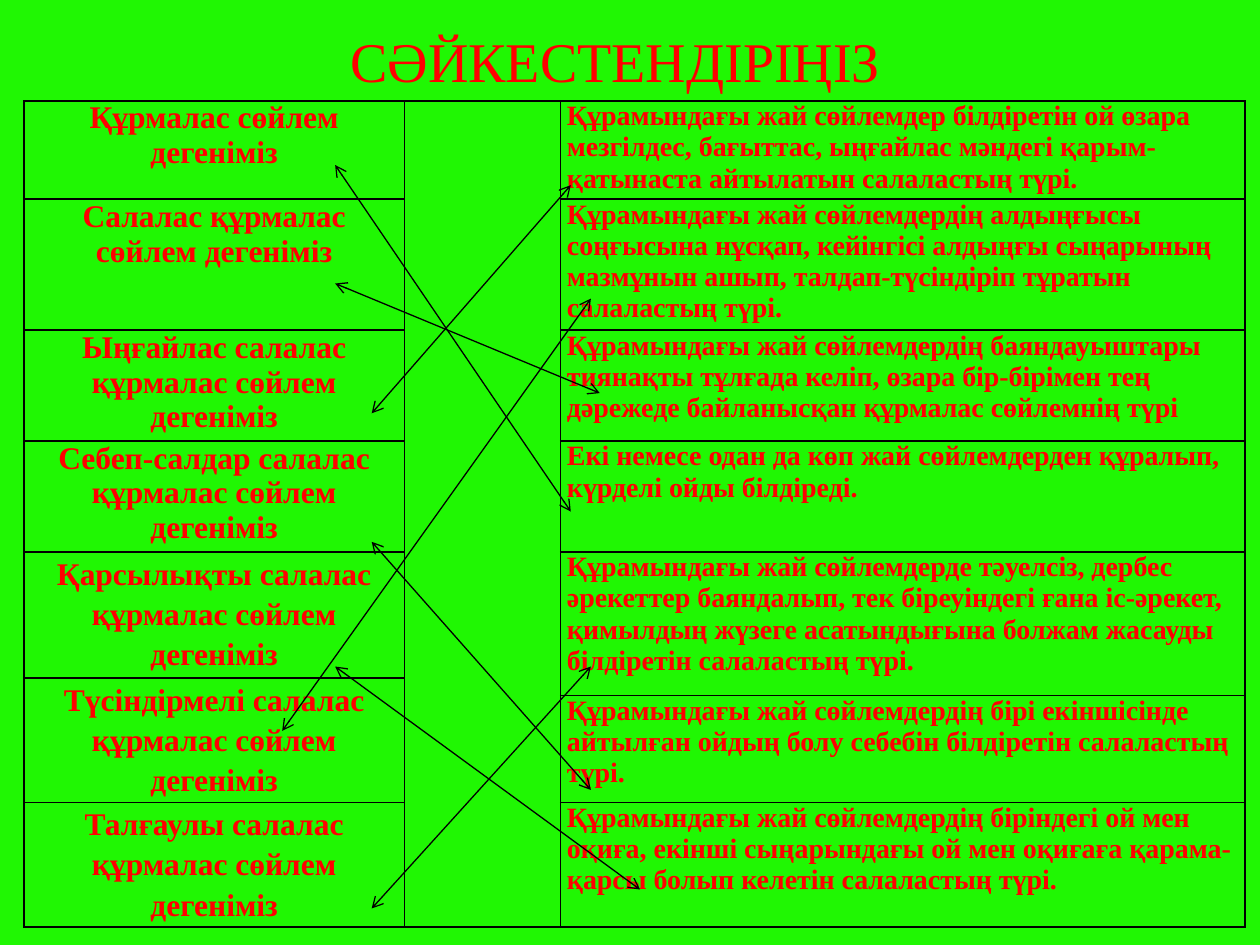
from dataclasses import dataclass

from lxml.etree import SubElement
from pptx import Presentation
from pptx.dml.color import RGBColor
from pptx.enum.shapes import MSO_CONNECTOR
from pptx.enum.text import MSO_ANCHOR, MSO_AUTO_SIZE, PP_ALIGN
from pptx.oxml import parse_xml
from pptx.oxml.ns import qn
from pptx.util import Inches, Pt


@dataclass(frozen=True)
class Theme:
    background: str = "20F703"
    ink: str = "FF0000"
    rule: str = "000000"
    font: str = "Times New Roman"
    title_size: int = 32
    term_size: int = 18
    definition_size: int = 16
    border_width: float = 1
    arrow_width: float = 0.75


THEME = Theme()
TITLE = "СӘЙКЕСТЕНДІРІҢІЗ"

# (first row, last row, line spacing, text)
TERMS = [
    (0, 0, None, "Құрмалас сөйлем дегеніміз"),
    (1, 1, None, "Салалас құрмалас сөйлем дегеніміз"),
    (2, 2, None, "Ыңғайлас салалас құрмалас сөйлем дегеніміз"),
    (3, 3, None, "Себеп-салдар салалас құрмалас сөйлем дегеніміз"),
    (4, 4, 1.15, "Қарсылықты салалас құрмалас сөйлем дегеніміз"),
    (5, 6, 1.15, "Түсіндірмелі салалас құрмалас сөйлем дегеніміз"),
    (7, 7, 1.15, "Талғаулы салалас құрмалас сөйлем дегеніміз"),
]
DEFINITIONS = [
    (0, 0, None, "Құрамындағы жай сөйлемдер білдіретін ой өзара мезгілдес, бағыттас, ыңғайлас мәндегі қарым-қатынаста айтылатын салаластың түрі."),
    (1, 1, None, "Құрамындағы жай сөйлемдердің алдыңғысы соңғысына нұсқап, кейінгісі алдыңғы сыңарының мазмұнын ашып, талдап-түсіндіріп тұратын салаластың түрі."),
    (2, 2, None, "Құрамындағы жай сөйлемдердің баяндауыштары тиянақты тұлғада келіп, өзара бір-бірімен тең дәрежеде байланысқан құрмалас сөйлемнің түрі"),
    (3, 3, None, "Екі немесе одан да көп жай сөйлемдерден құралып, күрделі ойды білдіреді."),
    (4, 5, None, "Құрамындағы жай сөйлемдерде тәуелсіз, дербес әрекеттер баяндалып, тек біреуіндегі ғана іс-әрекет, қимылдың жүзеге асатындығына болжам жасауды білдіретін салаластың түрі."),
    (6, 6, None, "Құрамындағы жай сөйлемдердің бірі екіншісінде айтылған ойдың болу себебін білдіретін салаластың түрі."),
    (7, 7, None, "Құрамындағы жай сөйлемдердің біріндегі ой мен оқиға, екінші сыңарындағы ой мен оқиғаға қарама-қарсы болып келетін салаластың түрі."),
]
MATCHES = [
    ((2.66, 1.31), (4.53, 4.06)),
    ((2.66, 2.25), (4.76, 3.12)),
    ((2.95, 3.28), (4.53, 1.47)),
    ((2.95, 4.3), (4.69, 6.27)),
    ((2.66, 5.29), (5.08, 7.06)),
    ((2.95, 7.21), (4.69, 5.29)),
    ((2.24, 5.8), (4.69, 2.37)),
]
COLUMN_WIDTHS = [3.02, 1.24, 5.43]
ROW_HEIGHTS = [0.78, 1.04, 0.88, 0.88, 1, 0.14, 0.85, 0.99]
LAST_ROW = len(ROW_HEIGHTS) - 1


def add_run(paragraph, text, size, bold):
    run = paragraph.add_run()
    run.text = text
    run.font.name = THEME.font
    run.font.size = Pt(size)
    run.font.bold = bold
    run.font.color.rgb = RGBColor.from_string(THEME.ink)


def style_cell(cell):
    cell.margin_left = cell.margin_right = Inches(0.05)
    cell.margin_top = cell.margin_bottom = 0
    cell.vertical_anchor = MSO_ANCHOR.TOP
    cell.fill.background()
    properties = cell._tc.get_or_add_tcPr()
    for position, side in enumerate(("lnL", "lnR", "lnT", "lnB")):
        properties.insert(position, parse_xml(
            f'<a:{side} xmlns:a="http://schemas.openxmlformats.org/drawingml/2006/main"'
            f' w="{Pt(THEME.border_width)}"><a:solidFill>'
            f'<a:srgbClr val="{THEME.rule}"/></a:solidFill></a:{side}>'))


def fill_column(table, column, entries, size, alignment):
    for first, last, spacing, text in entries:
        cell = table.cell(first, column)
        if last > first:
            cell.merge(table.cell(last, column))
        paragraph = cell.text_frame.paragraphs[0]
        paragraph.alignment = alignment
        if spacing:
            paragraph.line_spacing = spacing
        add_run(paragraph, text, size, True)


def add_matching_table(slide):
    frame = slide.shapes.add_table(
        len(ROW_HEIGHTS), len(COLUMN_WIDTHS), Inches(0.19), Inches(0.8),
        Inches(sum(COLUMN_WIDTHS)), Inches(sum(ROW_HEIGHTS)))
    table = frame.table
    table.first_row = table.horz_banding = False
    for column, width in zip(table.columns, COLUMN_WIDTHS):
        column.width = Inches(width)
    for row, height in zip(table.rows, ROW_HEIGHTS):
        row.height = Inches(height)
    for cell in table.iter_cells():
        style_cell(cell)
    table.cell(0, 1).merge(table.cell(LAST_ROW, 1))
    fill_column(table, 0, TERMS, THEME.term_size, PP_ALIGN.CENTER)
    fill_column(table, 2, DEFINITIONS, THEME.definition_size, PP_ALIGN.LEFT)


def add_title(slide):
    box = slide.shapes.add_textbox(Inches(2.66), Inches(0.16), Inches(4.45), Inches(0.64))
    box.text_frame.word_wrap = False
    box.text_frame.auto_size = MSO_AUTO_SIZE.SHAPE_TO_FIT_TEXT
    paragraph = box.text_frame.paragraphs[0]
    paragraph.alignment = PP_ALIGN.CENTER
    add_run(paragraph, TITLE, THEME.title_size, False)


def add_match_arrow(slide, start, end):
    arrow = slide.shapes.add_connector(
        MSO_CONNECTOR.STRAIGHT, *(Inches(value) for value in start + end))
    arrow.line.color.rgb = RGBColor.from_string(THEME.rule)
    arrow.line.width = Pt(THEME.arrow_width)
    line = arrow.line._get_or_add_ln()
    for tip in ("a:headEnd", "a:tailEnd"):
        SubElement(line, qn(tip), type="arrow")
    SubElement(arrow._element.spPr, qn("a:effectLst"))


def main():
    presentation = Presentation()
    presentation.slide_width = Inches(10)
    presentation.slide_height = Inches(7.5)
    slide = presentation.slides.add_slide(presentation.slide_layouts[6])
    background = slide.background.fill
    background.solid()
    background.fore_color.rgb = RGBColor.from_string(THEME.background)
    add_matching_table(slide)
    add_title(slide)
    for start, end in MATCHES:
        add_match_arrow(slide, start, end)
    presentation.save("out.pptx")


if __name__ == "__main__":
    main()
